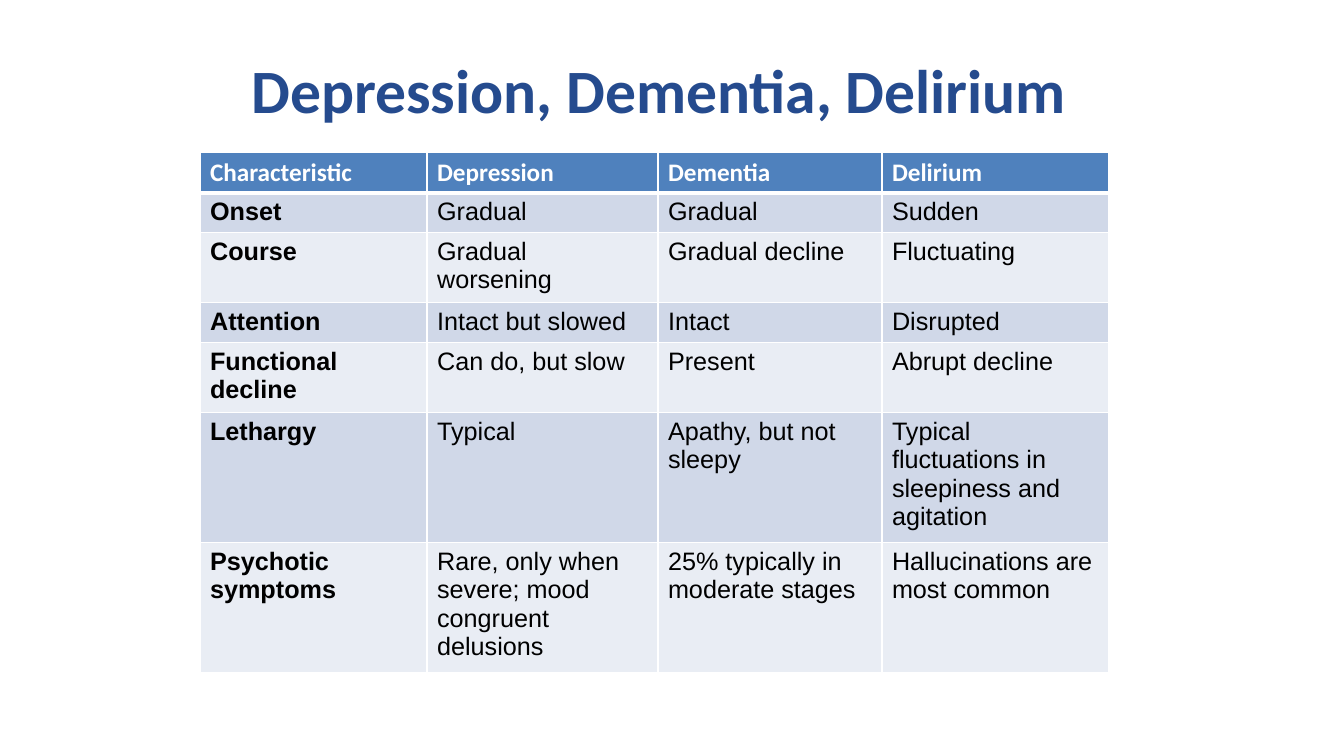
from lxml import etree
from pptx import Presentation, util as u
from pptx.dml.color import RGBColor
from pptx.enum import text as t
from pptx.oxml import ns

SCALE = 914400 / 100.8
NAVY = RGBColor(0x25, 0x4B, 0x8E)
BLUE = RGBColor(0x4F, 0x81, 0xBD)
MID = RGBColor(0xD0, 0xD8, 0xE8)
PALE = RGBColor(0xE9, 0xED, 0xF4)
WHITE = RGBColor(0xFF, 0xFF, 0xFF)
BLACK = RGBColor(0, 0, 0)

TITLE = "Depression, Dementia, Delirium"
COLS = [227, 231, 224, 227]
ROWS = [40, 40, 70, 40, 70, 130, 130]
CELLS = [
    ["Characteristic", "Depression", "Dementia", "Delirium"],
    ["Onset", "Gradual", "Gradual", "Sudden"],
    ["Course", "Gradual worsening", "Gradual decline", "Fluctuating"],
    ["Attention", "Intact but slowed", "Intact", "Disrupted"],
    ["Functional decline", "Can do, but slow", "Present", "Abrupt decline"],
    ["Lethargy", "Typical", "Apathy, but not sleepy",
     "Typical fluctuations in sleepiness and agitation"],
    ["Psychotic symptoms", "Rare, only when severe; mood congruent delusions",
     "25% typically in moderate stages", "Hallucinations are most common"],
]


def px(num):
    """Turn pixels into EMU."""
    return u.Emu(round(num * SCALE))


def style(font, color, **form):
    """Set the colour and the given format values of a font."""
    font.color.rgb = color
    for key, val in form.items():
        setattr(font, key, val)


def border(cell, widths):
    """Give the cell white borders with widths in points by side."""
    props = cell._tc.get_or_add_tcPr()
    for side, width in widths.items():
        line = etree.SubElement(props, ns.qn(f"a:ln{side}"), w=str(u.Pt(width)))
        fill = etree.SubElement(line, ns.qn("a:solidFill"))
        etree.SubElement(fill, ns.qn("a:srgbClr"), val=str(WHITE))


def add_title(slide):
    """Place and format the title."""
    title = slide.shapes.title
    box = dict(left=px(140), top=px(48), width=px(1039), height=px(84))
    for key, val in box.items():
        setattr(title, key, val)
    frame = title.text_frame
    frame.text = TITLE
    frame.vertical_anchor = t.MSO_ANCHOR.BOTTOM
    para = frame.paragraphs[0]
    para.alignment = t.PP_ALIGN.CENTER
    para.line_spacing = 0.9
    style(para.font, NAVY, name="Calibri", size=u.Pt(44), bold=True)


def fill_cell(cell, words, row, col):
    """Write one cell with its banding, borders and font."""
    head = row == 0
    cell.text = words
    border(cell, {"L": 1, "R": 1, "T": 3 if row == 1 else 1, "B": 3 if head else 1})
    cell.fill.solid()
    cell.fill.fore_color.rgb = BLUE if head else MID if row % 2 else PALE
    style(cell.text_frame.paragraphs[0].font, WHITE if head else BLACK,
          name="Calibri" if head else "Arial", size=u.Pt(18),
          bold=head or col == 0)


def add_grid(slide):
    """Add the table that compares the conditions."""
    frame = slide.shapes.add_table(len(ROWS), len(COLS), px(200), px(152),
                                   px(sum(COLS)), px(sum(ROWS)))
    grid = frame.table
    for col, width in zip(grid.columns, COLS):
        col.width = px(width)
    for row, height in zip(grid.rows, ROWS):
        row.height = px(height)
    for row, line in enumerate(CELLS):
        for col, words in enumerate(line):
            fill_cell(grid.cell(row, col), words, row, col)


def main():
    """Build and save the slide."""
    deck = Presentation()
    deck.slide_width, deck.slide_height = px(1344), px(756)
    slide = deck.slides.add_slide(deck.slide_layouts[0])
    sub = slide.placeholders[1].element
    sub.getparent().remove(sub)
    add_title(slide)
    add_grid(slide)
    deck.save("out.pptx")


if __name__ == "__main__":
    main()
